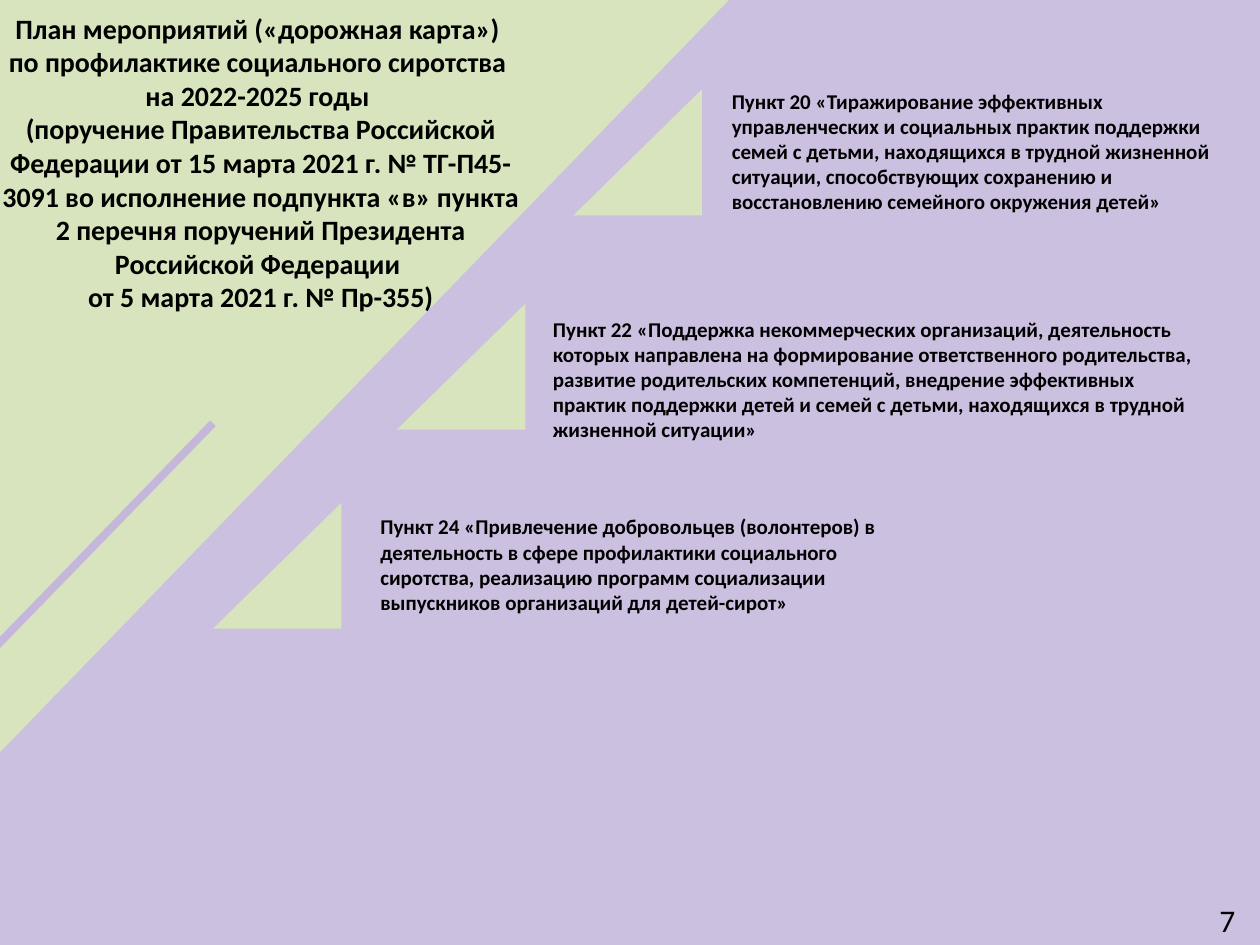
"""Build the road map slide on preventing social orphanhood."""
from lxml.etree import SubElement
from pptx import Presentation
from pptx.dml.color import RGBColor
from pptx.enum.shapes import MSO_CONNECTOR, MSO_SHAPE
from pptx.enum.text import MSO_AUTO_SIZE, PP_ALIGN
from pptx.oxml.ns import qn
from pptx.util import Inches, Pt

WIDTH, HEIGHT = Inches(10), Inches(7.5)
LILAC, STRIPE, GREEN, BLACK = "CCC0E0", "C4B7DB", "D7E4BD", "000000"
FONT = "Calibri"

TITLE = [
    "План мероприятий («дорожная карта») ",
    "по профилактике социального сиротства ",
    "на 2022-2025 годы ",
    "(поручение Правительства Российской Федерации от 15 марта 2021 г. № ТГ-П45-3091 "
    "во исполнение подпункта «в» пункта 2 перечня поручений Президента Российской Федерации ",
    "от 5 марта 2021 г. № Пр-355)",
]
MARKER_SIZE = (10.2, 13.33)
ITEMS = [
    {"marker": (45.5, 9.47), "area": (57.1, 8.67, 42.6, 14.8),
     "text": "Пункт 20 «Тиражирование эффективных управленческих и социальных практик "
             "поддержки семей с детьми, находящихся в трудной жизненной ситуации, "
             "способствующих сохранению и восстановлению семейного окружения детей»"},
    {"marker": (31.5, 32.13), "area": (42.9, 32.8, 53.5, 14.8),
     "text": "Пункт 22 «Поддержка некоммерческих организаций, деятельность которых "
             "направлена на формирование ответственного родительства, развитие "
             "родительских компетенций, внедрение эффективных практик поддержки детей "
             "и семей с детьми, находящихся в трудной жизненной ситуации»"},
    {"marker": (16.9, 53.2), "area": (29.2, 53.73, 44.8, 12.13),
     "text": "Пункт 24 «Привлечение добровольцев (волонтеров) в деятельность в сфере "
             "профилактики социального сиротства, реализацию программ социализации "
             "выпускников организаций для детей-сирот»"},
]


def color(value):
    return RGBColor.from_string(value)


def place(*shares):
    """Turn alternating horizontal and vertical percentages into lengths."""
    return [round(share * (HEIGHT if index % 2 else WIDTH) / 100)
            for index, share in enumerate(shares)]


def add_triangle(page, area, apex, rotation=0):
    triangle = page.shapes.add_shape(MSO_SHAPE.ISOSCELES_TRIANGLE, *place(*area))
    triangle.adjustments[0] = apex
    triangle.rotation = rotation
    triangle.shadow.inherit = False
    triangle.fill.solid()
    triangle.fill.fore_color.rgb = color(GREEN)
    triangle.line.fill.background()


def add_stripe(page, ends):
    stripe = page.shapes.add_connector(MSO_CONNECTOR.STRAIGHT, *place(*ends))
    stripe.line.color.rgb = color(STRIPE)
    stripe.line.width = Pt(4.5)
    SubElement(stripe._element.spPr, qn("a:effectLst"))


def add_text(page, text, area, size=12, bold=True, align=PP_ALIGN.LEFT, wrap=True):
    box = page.shapes.add_textbox(*place(*area))
    frame = box.text_frame
    frame.word_wrap = wrap
    frame.auto_size = MSO_AUTO_SIZE.SHAPE_TO_FIT_TEXT
    frame.text = text
    for para in frame.paragraphs:
        para.alignment = align
        for span in para.runs:
            span.font.name = FONT
            span.font.size = Pt(size)
            span.font.bold = bold
            span.font.color.rgb = color(BLACK)


def main():
    deck = Presentation()
    deck.slide_width, deck.slide_height = WIDTH, HEIGHT
    page = deck.slides.add_slide(deck.slide_layouts[6])
    page.background.fill.solid()
    page.background.fill.fore_color.rgb = color(LILAC)

    add_triangle(page, (-28.1, -8.27, 83.8, 56.53), apex=0.51, rotation=314.1)
    add_stripe(page, (-0.4, 68.53, 16.9, 44.8))
    add_text(page, "\n".join(TITLE), (-1.6, 0.53, 44.6, 33.6), size=16,
             align=PP_ALIGN.CENTER)
    for item in ITEMS:
        add_triangle(page, item["marker"] + MARKER_SIZE, apex=1)
        add_text(page, item["text"], item["area"])
    add_text(page, "7", (95.8, 94.67, 3.3, 5.33), size=18, bold=False, wrap=False)
    deck.save("out.pptx")


if __name__ == "__main__":
    main()
